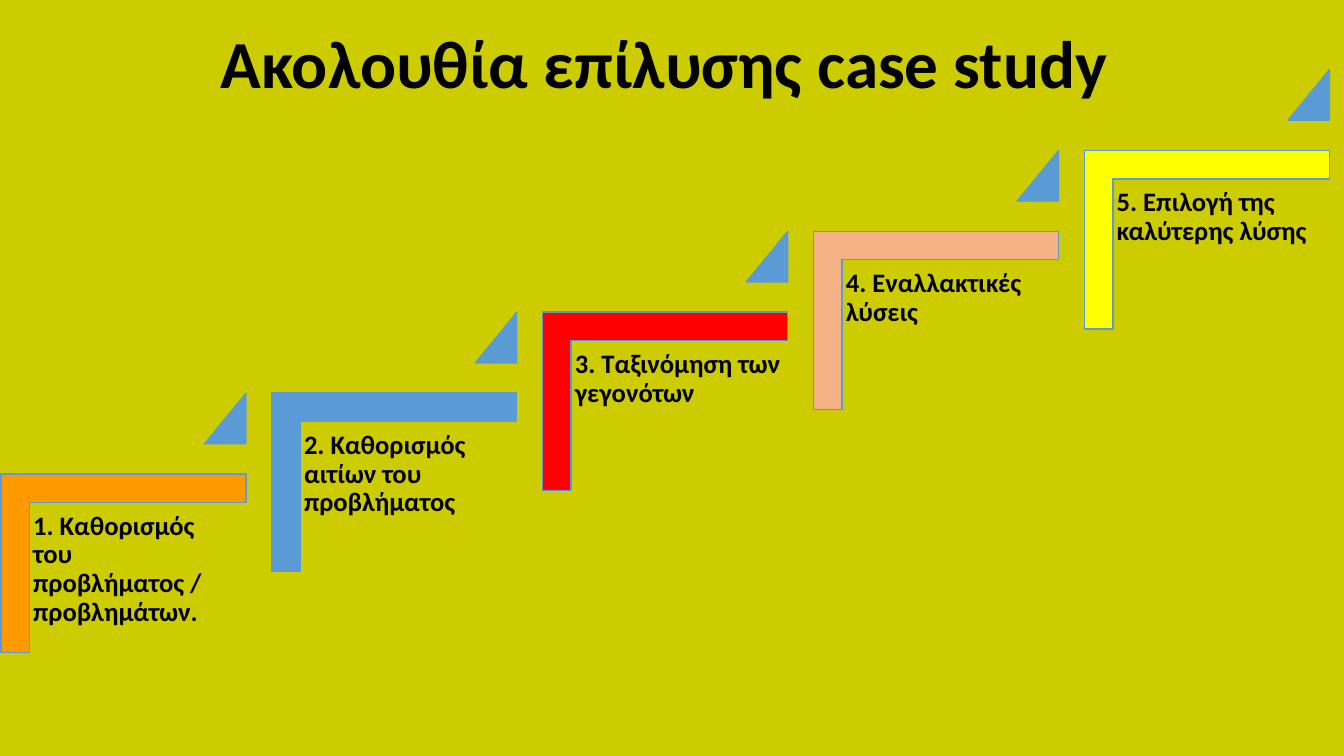
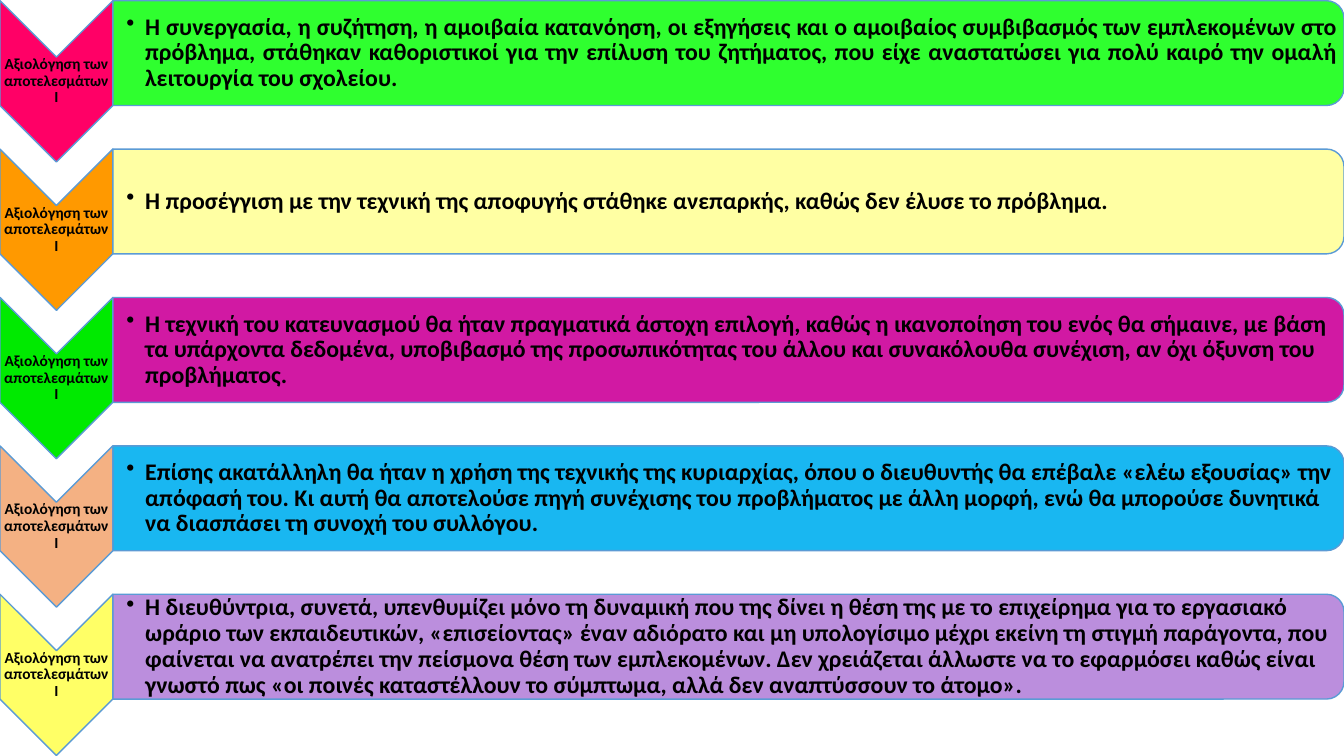
from lxml import etree
from pptx import Presentation
from pptx.dml.color import RGBColor
from pptx.enum.shapes import MSO_SHAPE
from pptx.enum.text import MSO_ANCHOR, PP_ALIGN
from pptx.oxml.ns import qn
from pptx.util import Pt

# Enum members
RECT = MSO_SHAPE.RECTANGLE
CORNER = MSO_SHAPE.CORNER
TRIANGLE = MSO_SHAPE.ISOSCELES_TRIANGLE
CHEVRON = MSO_SHAPE.CHEVRON
ROUND_TOP = MSO_SHAPE.ROUND_2_SAME_RECTANGLE
TOP, MIDDLE = MSO_ANCHOR.TOP, MSO_ANCHOR.MIDDLE
LEFT, CENTER, JUSTIFY = PP_ALIGN.LEFT, PP_ALIGN.CENTER, PP_ALIGN.JUSTIFY

# Shared look
FONT = "Calibri"
SLIDE_W, SLIDE_H = 960, 540
BLACK = RGBColor(0x00, 0x00, 0x00)
BLUE = RGBColor(0x5B, 0x9B, 0xD5)
OLIVE = RGBColor(0xCC, 0xCC, 0x00)
ORANGE = RGBColor(0xFF, 0x99, 0x00)
RED = RGBColor(0xFF, 0x00, 0x00)
PEACH = RGBColor(0xF4, 0xB1, 0x83)
YELLOW = RGBColor(0xFF, 0xFF, 0x00)
PINK = RGBColor(0xFF, 0x00, 0x66)
GREEN = RGBColor(0x00, 0xEA, 0x00)
LEMON = RGBColor(0xFF, 0xFF, 0x66)
LIME = RGBColor(0x19, 0xFF, 0x19)
CREAM = RGBColor(0xFF, 0xFF, 0x99)
MAGENTA = RGBColor(0xCC, 0x00, 0x99)
SKY = RGBColor(0x00, 0xB0, 0xF0)
VIOLET = RGBColor(0xB4, 0x82, 0xDA)

# Slide text
TITLE = "Ακολουθία επίλυσης case study "
STEPS = [
    ("1. Καθορισμός του προβλήματος / προβλημάτων.", ORANGE),
    ("2. Καθορισμός αιτίων του προβλήματος", BLUE),
    ("3. Ταξινόμηση των γεγονότων", RED),
    ("4. Εναλλακτικές λύσεις", PEACH),
    ("5. Επιλογή της καλύτερης λύσης", YELLOW),
]
ROW_LABEL = "Αξιολόγηση των αποτελεσμάτων Ι"
ROWS = [
    (PINK, LIME, JUSTIFY,
     "Η συνεργασία, η συζήτηση, η αμοιβαία κατανόηση, οι εξηγήσεις και ο "
     "αμοιβαίος συμβιβασμός των εμπλεκομένων στο πρόβλημα, στάθηκαν "
     "καθοριστικοί για την επίλυση του ζητήματος, που είχε αναστατώσει για "
     "πολύ καιρό την ομαλή λειτουργία του σχολείου."),
    (ORANGE, CREAM, LEFT,
     "Η προσέγγιση με την τεχνική της αποφυγής στάθηκε ανεπαρκής, καθώς δεν "
     "έλυσε το πρόβλημα."),
    (GREEN, MAGENTA, LEFT,
     "Η τεχνική του κατευνασμού θα ήταν πραγματικά άστοχη επιλογή, καθώς η "
     "ικανοποίηση του ενός θα σήμαινε, με βάση τα υπάρχοντα δεδομένα, "
     "υποβιβασμό της προσωπικότητας του άλλου και συνακόλουθα συνέχιση, αν "
     "όχι όξυνση του προβλήματος."),
    (PEACH, SKY, LEFT,
     "Επίσης ακατάλληλη θα ήταν η χρήση της τεχνικής της κυριαρχίας, όπου ο "
     "διευθυντής θα επέβαλε «ελέω εξουσίας» την απόφασή του. Κι αυτή θα "
     "αποτελούσε πηγή συνέχισης του προβλήματος με άλλη μορφή, ενώ θα "
     "μπορούσε δυνητικά να διασπάσει τη συνοχή του συλλόγου."),
    (LEMON, VIOLET, LEFT,
     "Η διευθύντρια, συνετά, υπενθυμίζει μόνο τη δυναμική που της δίνει η "
     "θέση της με το επιχείρημα για το εργασιακό ωράριο των εκπαιδευτικών, "
     "«επισείοντας» έναν αδιόρατο και μη υπολογίσιμο μέχρι εκείνη τη στιγμή "
     "παράγοντα, που φαίνεται να ανατρέπει την πείσμονα θέση των "
     "εμπλεκομένων. Δεν χρειάζεται άλλωστε να το εφαρμόσει καθώς είναι "
     "γνωστό πως «οι ποινές καταστέλλουν το σύμπτωμα, αλλά δεν αναπτύσσουν "
     "το άτομο»."),
]


def add_shape(s, kind, x, y, w, h, fill, line=BLUE, turned=False):
    """Place a shape in the visible box; a turned one is rotated by 90 degrees."""
    if turned:
        x, y, w, h = x + (w - h) / 2, y + (h - w) / 2, h, w
    sp = s.shapes.add_shape(kind, Pt(x), Pt(y), Pt(w), Pt(h))
    sp.rotation = 90 if turned else 0
    sp.shadow.inherit = False
    sp.fill.solid()
    sp.fill.fore_color.rgb = fill
    if line is None:
        sp.line.fill.background()
    else:
        sp.line.color.rgb = line
        sp.line.width = Pt(1)
    return sp


def set_alpha(sp, percent):
    color = sp.fill._xPr.find(qn("a:solidFill"))[0]
    etree.SubElement(color, qn("a:alpha"), val=str(percent * 1000))


def add_bullet(p, indent):
    pPr = p._p.get_or_add_pPr()
    pPr.set("marL", str(Pt(indent)))
    pPr.set("indent", str(-Pt(indent)))
    etree.SubElement(pPr, qn("a:buChar"), char="•")


def write(sp, text, size, align=LEFT, anchor=TOP, spacing=0.9,
          insets=(7.2, 3.6, 7.2, 3.6), bullet_indent=0):
    tf = sp.text_frame
    tf.word_wrap = True
    tf.vertical_anchor = anchor
    tf.margin_left, tf.margin_top, tf.margin_right, tf.margin_bottom = map(Pt, insets)
    p = tf.paragraphs[0]
    if bullet_indent:
        add_bullet(p, bullet_indent)
    p.alignment = align
    p.line_spacing = spacing
    r = p.add_run()
    r.text = text
    r.font.name = FONT
    r.font.size = Pt(size)
    r.font.bold = True
    r.font.color.rgb = BLACK


def add_text(s, x, y, w, h, text, size, **style):
    sp = s.shapes.add_textbox(Pt(x), Pt(y), Pt(w), Pt(h))
    write(sp, text, size, **style)


def add_step(s, x, y, text, fill, has_arrow=True):
    """One stair: corner bracket, its text and the triangle above it."""
    corner = add_shape(s, CORNER, x, y, 175, 127.5, fill, turned=True)
    corner.adjustments[0] = corner.adjustments[1] = 0.16
    add_text(s, x + 17.4, y + 21.6, 158.4, 167, text, 19, insets=(5.7,) * 4)
    triangle = add_shape(s, TRIANGLE, x + 145.5, y - 57.6, 29.5, 36, BLUE)
    triangle.adjustments[0] = 1


def build_staircase(prs):
    s = prs.slides.add_slide(prs.slide_layouts[6])
    backdrop = add_shape(s, RECT, 0, 0, SLIDE_W, SLIDE_H, OLIVE, line=None)
    write(backdrop, TITLE, 48, align=CENTER, spacing=1.2)
    for i, (text, fill) in enumerate(STEPS):
        add_step(s, 0.6 + 193.5 * i, 338.6 - 57.8 * i, text, fill)


def add_row(s, x, y, chevron_fill, panel_fill, align, text):
    """One evaluation row: labelled chevron and a panel with its finding."""
    chevron_w = 80.6
    add_shape(s, CHEVRON, x, y, chevron_w, 115.2, chevron_fill, turned=True)
    add_text(s, x, y + 40.3, chevron_w, 34.6, ROW_LABEL, 11,
             align=CENTER, anchor=MIDDLE, insets=(0.7,) * 4)
    panel = add_shape(s, ROUND_TOP, x + chevron_w, y, 879.4, 74.9, panel_fill, turned=True)
    set_alpha(panel, 90)
    add_text(s, x + chevron_w, y + 3.7, 875.7, 67.6, text, 17, align=align,
             anchor=MIDDLE, insets=(9.6, 0.7, 0.7, 0.7), bullet_indent=13.5)


def build_evaluation(prs):
    s = prs.slides.add_slide(prs.slide_layouts[6])
    for i, row in enumerate(ROWS):
        add_row(s, 0, 0.5 + 106 * i, *row)


def main():
    prs = Presentation()
    prs.slide_width, prs.slide_height = Pt(SLIDE_W), Pt(SLIDE_H)
    build_staircase(prs)
    build_evaluation(prs)
    prs.save("out.pptx")


if __name__ == "__main__":
    main()
